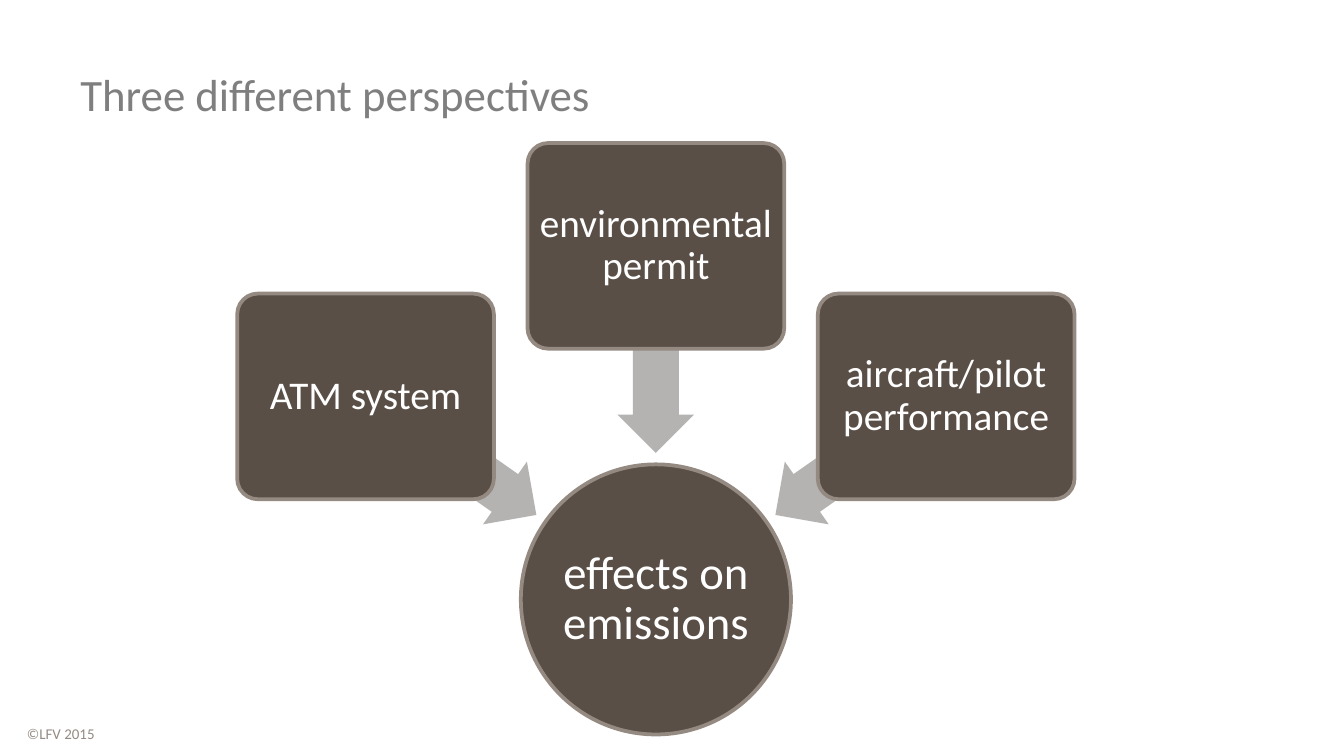
import pptx
import pptx.util
import pptx.dml.color
import pptx.enum.shapes
import pptx.enum.text

COLOURS = {
    "background": "FFFFFF",
    "title": "7F7F7F",
    "node": "5A4F47",
    "edge": "948A82",
    "arrow": "B5B3B1",
    "label": "FFFFFF",
}
TITLE = "Three different perspectives"
COPYRIGHT = "©LFV 2015"
EFFECT = "effects on emissions"
PERSPECTIVES = [
    {"text": "ATM system", "side": -1, "y": 2.95, "arrow_y": 3.39, "turn": 215},
    {"text": "environmental permit", "side": 0, "y": 1.83, "arrow_y": 2.6, "turn": 270},
    {"text": "aircraft/pilot performance", "side": 1, "y": 2.95, "arrow_y": 3.39, "turn": 325},
]

SLIDE_WIDTH = 10
SLIDE_HEIGHT = SLIDE_WIDTH * 9 / 16
CENTRE_X = 4.88
CIRCLE_Y = 4.46
BOX_STEP = 2.16
ARROW_STEP = 1.52
CIRCLE_SIZE = (2.01, 2.01)
BOX_SIZE = (1.91, 1.53)
ARROW_SIZE = (1.54, 0.57)
FOOTER_SIZE = (1.03, 0.28)

Inches = pptx.util.Inches
Pt = pptx.util.Pt
SHAPES = pptx.enum.shapes.MSO_SHAPE
ANCHORS = pptx.enum.text.MSO_ANCHOR


def colour(name):
    return pptx.dml.color.RGBColor.from_string(COLOURS[name])


def write(shape, text, size, shade, margins, anchor, **paragraph_format):
    frame = shape.text_frame
    frame.word_wrap = True
    frame.vertical_anchor = anchor
    for side, margin in zip(("left", "top", "right", "bottom"), margins):
        setattr(frame, f"margin_{side}", Inches(margin))
    para = frame.paragraphs[0]
    for key, value in paragraph_format.items():
        setattr(para, key, value)
    span = para.add_run()
    span.text = text
    for key, value in {"name": "Calibri", "size": Pt(size)}.items():
        setattr(span.font, key, value)
    span.font.color.rgb = colour(shade)


def add_centred(page, kind, x, y, size, fill, adjustments=()):
    width, height = size
    shape = page.shapes.add_shape(
        kind, Inches(x - width / 2), Inches(y - height / 2), Inches(width), Inches(height))
    shape.shadow.inherit = False
    for index, value in enumerate(adjustments):
        shape.adjustments[index] = value
    shape.fill.solid()
    shape.fill.fore_color.rgb = colour(fill)
    shape.line.fill.background()
    return shape


def add_node(page, kind, x, y, size, text, text_size, margin, adjustments=()):
    node = add_centred(page, kind, x, y, size, "node", adjustments)
    node.line.color.rgb = colour("edge")
    node.line.width = Pt(2)
    write(node, text, text_size, "label", [margin] * 4, ANCHORS.MIDDLE,
          alignment=pptx.enum.text.PP_ALIGN.CENTER, line_spacing=0.9)


def main():
    deck = pptx.Presentation()
    deck.slide_width, deck.slide_height = Inches(SLIDE_WIDTH), Inches(SLIDE_HEIGHT)
    page = deck.slides.add_slide(deck.slide_layouts[6])
    page.background.fill.solid()
    page.background.fill.fore_color.rgb = colour("background")

    footer_width, footer_height = FOOTER_SIZE
    footer = page.shapes.add_textbox(Inches(0), Inches(SLIDE_HEIGHT - footer_height),
                                     Inches(footer_width), Inches(footer_height))
    write(footer, COPYRIGHT, 8, "edge", (0.2, 0.05, 0.1, 0.1), ANCHORS.TOP)
    title = page.shapes.add_textbox(Inches(0.5), Inches(0.23), Inches(9), Inches(0.94))
    write(title, TITLE, 24, "title", (0.1, 0.05, 0.1, 0.05), ANCHORS.MIDDLE)

    add_node(page, SHAPES.OVAL, CENTRE_X, CIRCLE_Y, CIRCLE_SIZE, EFFECT, 25, 0.02)
    for item in PERSPECTIVES:
        arrow = add_centred(page, SHAPES.LEFT_ARROW, CENTRE_X + item["side"] * ARROW_STEP,
                            item["arrow_y"], ARROW_SIZE, "arrow", (0.6, 0.5))
        arrow.rotation = item["turn"]
        add_node(page, SHAPES.ROUNDED_RECTANGLE, CENTRE_X + item["side"] * BOX_STEP,
                 item["y"], BOX_SIZE, item["text"], 21, 0.04, (0.1,))

    deck.save("out.pptx")


if __name__ == "__main__":
    main()
